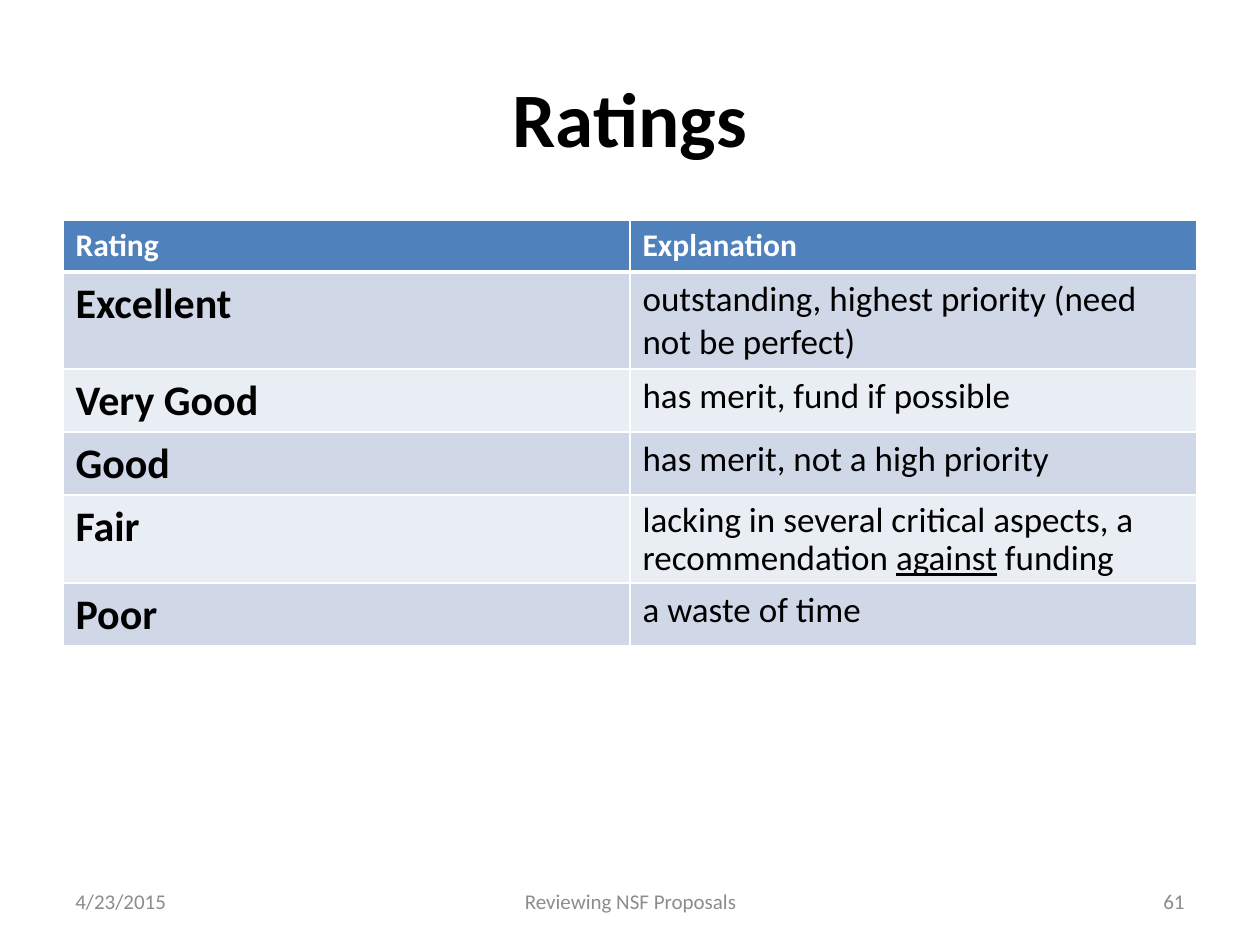
from lxml.etree import SubElement
from pptx import Presentation
from pptx.dml.color import RGBColor
from pptx.enum.text import MSO_ANCHOR, PP_ALIGN
from pptx.oxml.ns import qn
from pptx.util import Inches, Pt

COLORS = {
    "text": "000000",
    "footer": "8C8C8C",
    "white": "FFFFFF",
    "header": "4F81BD",
    "odd": "D0D8E8",
    "even": "E9EDF4",
}
RATINGS = [
    ("Excellent", ["outstanding, highest priority (need not be perfect)"]),
    ("Very Good", ["has merit, fund if possible"]),
    ("Good", ["has merit, not a high priority"]),
    ("Fair", ["lacking in several critical aspects, a recommendation ", "against", " funding"]),
    ("Poor", ["a waste of time"]),
]
ROW_HEIGHT = 0.41


def add_run(p, text, color, **font):
    """Append a run with its font values."""
    r = p.add_run()
    r.text = text
    r.font.color.rgb = RGBColor.from_string(COLORS[color])
    for name, value in {"name": "Calibri", **font}.items():
        setattr(r.font, name, value)


def add_label(s, box, text, align, color, **font):
    """Add a one-line text box, centred vertically."""
    tf = s.shapes.add_textbox(*map(Inches, box)).text_frame
    tf.word_wrap = True
    tf.vertical_anchor = MSO_ANCHOR.MIDDLE
    p = tf.paragraphs[0]
    p.alignment = align
    add_run(p, text, color, **font)


def style_cell(cell, fill, widths):
    """Give a cell white borders, a fill and margins."""
    tc_pr = cell._tc.get_or_add_tcPr()
    for side, width in widths.items():
        ln = SubElement(tc_pr, qn(f"a:ln{side}"), w=str(Pt(width)))
        SubElement(SubElement(ln, qn("a:solidFill")), qn("a:srgbClr"), val=COLORS["white"])
    cell.fill.solid()
    cell.fill.fore_color.rgb = RGBColor.from_string(COLORS[fill])
    cell.margin_left = cell.margin_right = Inches(0.1)
    cell.margin_top = cell.margin_bottom = Inches(0.05)


def add_ratings_table(s):
    """Add the table of ratings and their explanations."""
    count = len(RATINGS) + 1
    table = s.shapes.add_table(
        count, 2, Inches(0.5), Inches(1.75), Inches(9), Inches(ROW_HEIGHT * count)
    ).table
    for row in range(count):
        fill = "header" if row == 0 else "odd" if row % 2 else "even"
        widths = {"L": 1, "R": 1, "T": 3 if row == 1 else 1, "B": 3 if row == 0 else 1}
        for cell in table.rows[row].cells:
            style_cell(cell, fill, widths)
    for col, title in enumerate(("Rating", "Explanation")):
        p = table.cell(0, col).text_frame.paragraphs[0]
        add_run(p, title, "white", size=Pt(18), bold=True)
    for row, (rating, parts) in enumerate(RATINGS, 1):
        p = table.cell(row, 0).text_frame.paragraphs[0]
        add_run(p, rating, "text", size=Pt(24), bold=True)
        p = table.cell(row, 1).text_frame.paragraphs[0]
        if rating == "Fair":
            p.line_spacing = 0.9
        for part in parts:
            add_run(p, part, "text", size=Pt(20), bold=False, underline=part == "against")


def main():
    """Build the slide and save it."""
    prs = Presentation()
    prs.slide_width, prs.slide_height = Inches(10), Inches(7.5)
    s = prs.slides.add_slide(prs.slide_layouts[6])
    add_label(s, (0.5, 0.3, 9, 1.25), "Ratings", PP_ALIGN.CENTER, "text", size=Pt(44), bold=True)
    add_ratings_table(s)
    for left, width, text, align in (
        (0.5, 2.33, "4/23/2015", PP_ALIGN.LEFT),
        (3.42, 3.17, "Reviewing NSF Proposals", PP_ALIGN.CENTER),
        (7.17, 2.33, "61", PP_ALIGN.RIGHT),
    ):
        add_label(s, (left, 6.95, width, 0.4), text, align, "footer", size=Pt(12))
    prs.save("out.pptx")


if __name__ == "__main__":
    main()
